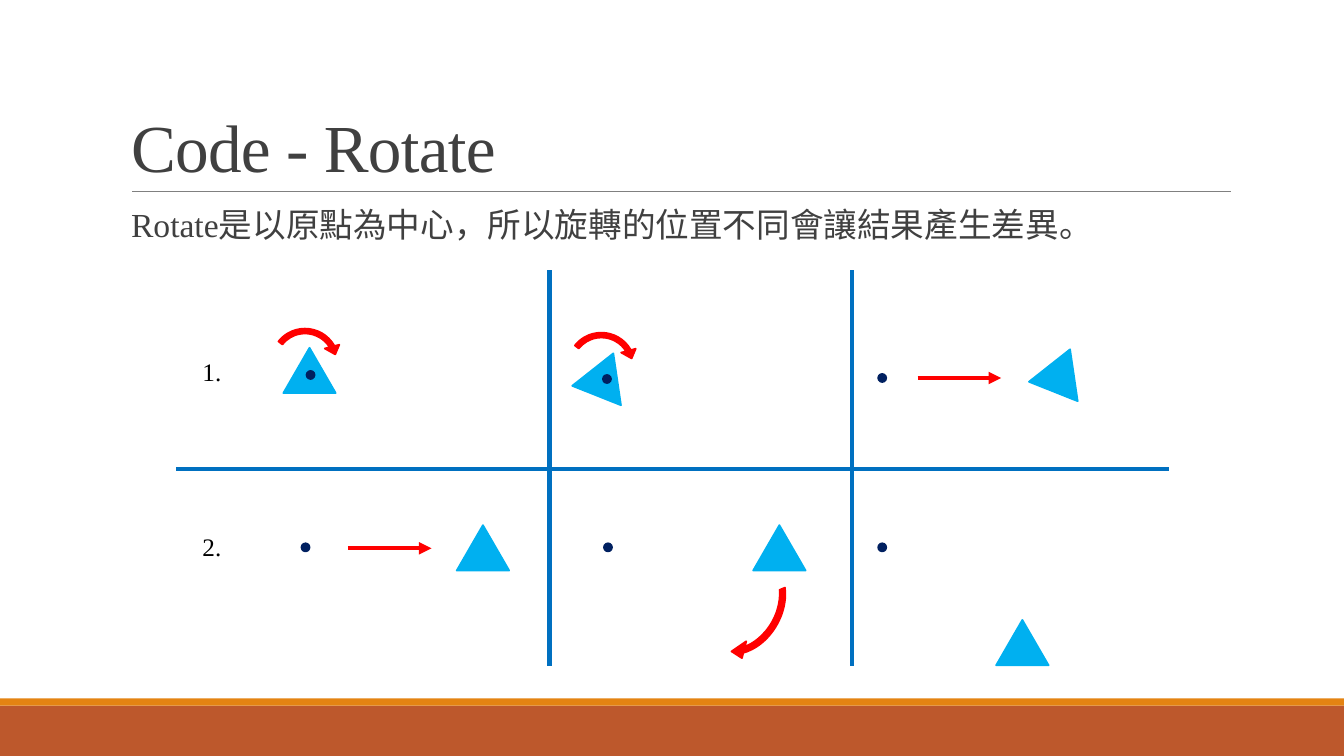
import lxml.etree
import pptx
import pptx.dml.color
import pptx.enum.shapes
import pptx.enum.text
import pptx.oxml.ns
import pptx.util

Inches = pptx.util.Inches
Pt = pptx.util.Pt
RGBColor = pptx.dml.color.RGBColor
Shape = pptx.enum.shapes.MSO_SHAPE
Anchor = pptx.enum.text.MSO_ANCHOR
AutoSize = pptx.enum.text.MSO_AUTO_SIZE
Align = pptx.enum.text.PP_ALIGN

RUST = RGBColor(0xBD, 0x58, 0x2C)
ORANGE = RGBColor(0xE4, 0x83, 0x12)
GREY = RGBColor(0x80, 0x80, 0x80)
DARK = RGBColor(0x40, 0x40, 0x40)
BLACK = RGBColor(0, 0, 0)
SKY = RGBColor(0x00, 0xB0, 0xF0)
NAVY = RGBColor(0x00, 0x20, 0x60)
RED = RGBColor(0xFF, 0, 0)
BLUE = RGBColor(0x00, 0x70, 0xC0)

TURN = (0.063, 9.27, 197.948, 130.963, 0.097)


def apply(target, values):
    for name, value in values.items():
        setattr(target, name, value)


def add_xml(parent, tag, **attributes):
    return lxml.etree.SubElement(parent, pptx.oxml.ns.qn(tag), attributes)


class RotateSlide:
    font = "Times New Roman"

    def __init__(self, deck):
        self.slide = deck.slides.add_slide(deck.slide_layouts[1])
        self.shapes = self.slide.shapes

    def set_text(self, holder, text, size, color, frame_format, paragraph_format):
        frame = holder.text_frame
        apply(frame, frame_format)
        paragraph = frame.paragraphs[0]
        apply(paragraph, paragraph_format)
        run = paragraph.add_run()
        run.text = text
        apply(run.font, {"name": self.font, "size": Pt(size)})
        run.font.color.rgb = color
        return paragraph, run

    def place(self, holder, left, top, width, height):
        apply(holder, {"left": Inches(left), "top": Inches(top),
                       "width": Inches(width), "height": Inches(height)})

    def title(self, text):
        heading = self.shapes.title
        self.place(heading, 1.2, 0.31, 11, 1.59)
        _, run = self.set_text(
            heading, text, 48, DARK,
            {"vertical_anchor": Anchor.BOTTOM, "auto_size": AutoSize.NONE, "word_wrap": True},
            {"alignment": Align.LEFT, "line_spacing": 0.85})
        run.font._element.set("spc", "-50")

    def body(self, text):
        statement = self.slide.placeholders[1]
        self.place(statement, 1.2, 2.02, 11, 4.4)
        paragraph, _ = self.set_text(
            statement, text, 24, DARK,
            {"margin_left": 0, "margin_right": 0, "auto_size": AutoSize.NONE, "word_wrap": True},
            {"line_spacing": 0.9, "space_before": Pt(12), "space_after": Pt(2)})
        properties = paragraph._p.get_or_add_pPr()
        properties.set("marL", str(Inches(0.1)))
        properties.set("indent", str(Inches(-0.1)))
        bullet_color = add_xml(properties, "a:buClr")
        add_xml(bullet_color, "a:srgbClr", val=str(ORANGE))
        add_xml(properties, "a:buChar", char=" ")

    def label(self, text, top):
        box = self.shapes.add_textbox(Inches(1.91), Inches(top), Inches(0.43), Inches(0.4))
        self.set_text(box, text, 18, BLACK,
                      {"word_wrap": True, "auto_size": AutoSize.SHAPE_TO_FIT_TEXT}, {})

    def figure(self, kind, left, top, width, height, color, rotation=0, outlined=True):
        figure = self.shapes.add_shape(kind, Inches(left), Inches(top), Inches(width), Inches(height))
        figure.shadow.inherit = False
        figure.rotation = rotation
        figure.fill.solid()
        figure.fill.fore_color.rgb = color
        if outlined:
            figure.line.color.rgb = color
            figure.line.width = Pt(1.25)
        else:
            figure.line.fill.background()
        return figure

    def triangle(self, left, top, rotation=0):
        self.figure(Shape.ISOSCELES_TRIANGLE, left, top, 0.52, 0.45, SKY, rotation)

    def origin(self, left, top):
        self.figure(Shape.OVAL, left, top, 0.08, 0.08, NAVY)

    def turn(self, left, top, width=0.77, height=0.77, rotation=0):
        arrow = self.figure(Shape.CIRCULAR_ARROW, left, top, width, height, RED, rotation)
        for index, value in enumerate(TURN):
            arrow.adjustments[index] = value

    def line(self, x1, y1, x2, y2, color, width=3, arrow=False):
        line = self.shapes.add_connector(
            pptx.enum.shapes.MSO_CONNECTOR.STRAIGHT, Inches(x1), Inches(y1), Inches(x2), Inches(y2))
        line.line.color.rgb = color
        line.line.width = Pt(width)
        properties = line._element.spPr
        if arrow:
            add_xml(properties.find(pptx.oxml.ns.qn("a:ln")), "a:tailEnd", type="triangle")
        add_xml(properties, "a:effectLst")

    def move(self, left, y):
        self.line(left, y, left + 0.83, y, RED, arrow=True)


def main():
    deck = pptx.Presentation()
    apply(deck, {"slide_width": Inches(13.33), "slide_height": Inches(7.5)})
    page = RotateSlide(deck)

    page.title("Code - Rotate")
    page.body("Rotate是以原點為中心，所以旋轉的位置不同會讓結果產生差異。")
    page.figure(Shape.RECTANGLE, 0, 7, 13.33, 0.5, RUST, outlined=False)
    page.figure(Shape.RECTANGLE, 0, 6.93, 13.33, 0.07, ORANGE, outlined=False)
    page.line(1.31, 1.9, 12.21, 1.9, GREY, 0.5)

    for left, top, rotation in ((2.81, 3.45, 0), (5.74, 3.49, 21.7), (10.27, 3.45, 21.7),
                                (4.53, 5.21, 0), (7.47, 5.21, 0), (9.88, 6.15, 0)):
        page.triangle(left, top, rotation)
    page.turn(2.64, 3.21)
    page.turn(5.58, 3.25)
    page.turn(6.8, 5.56, 1.14, 0.89, 118.8)
    for left, top in ((3.04, 3.68), (5.98, 3.72), (8.71, 3.71),
                      (2.99, 5.39), (5.99, 5.39), (8.71, 5.39)):
        page.origin(left, top)
    page.move(9.1, 3.75)
    page.move(3.45, 5.44)

    page.line(1.75, 4.65, 11.59, 4.65, BLUE)
    for x in (5.45, 8.45):
        page.line(x, 2.68, x, 6.61, BLUE)
    for text, top in (("1.", 3.49), ("2.", 5.22)):
        page.label(text, top)

    deck.save("out.pptx")


if __name__ == "__main__":
    main()
